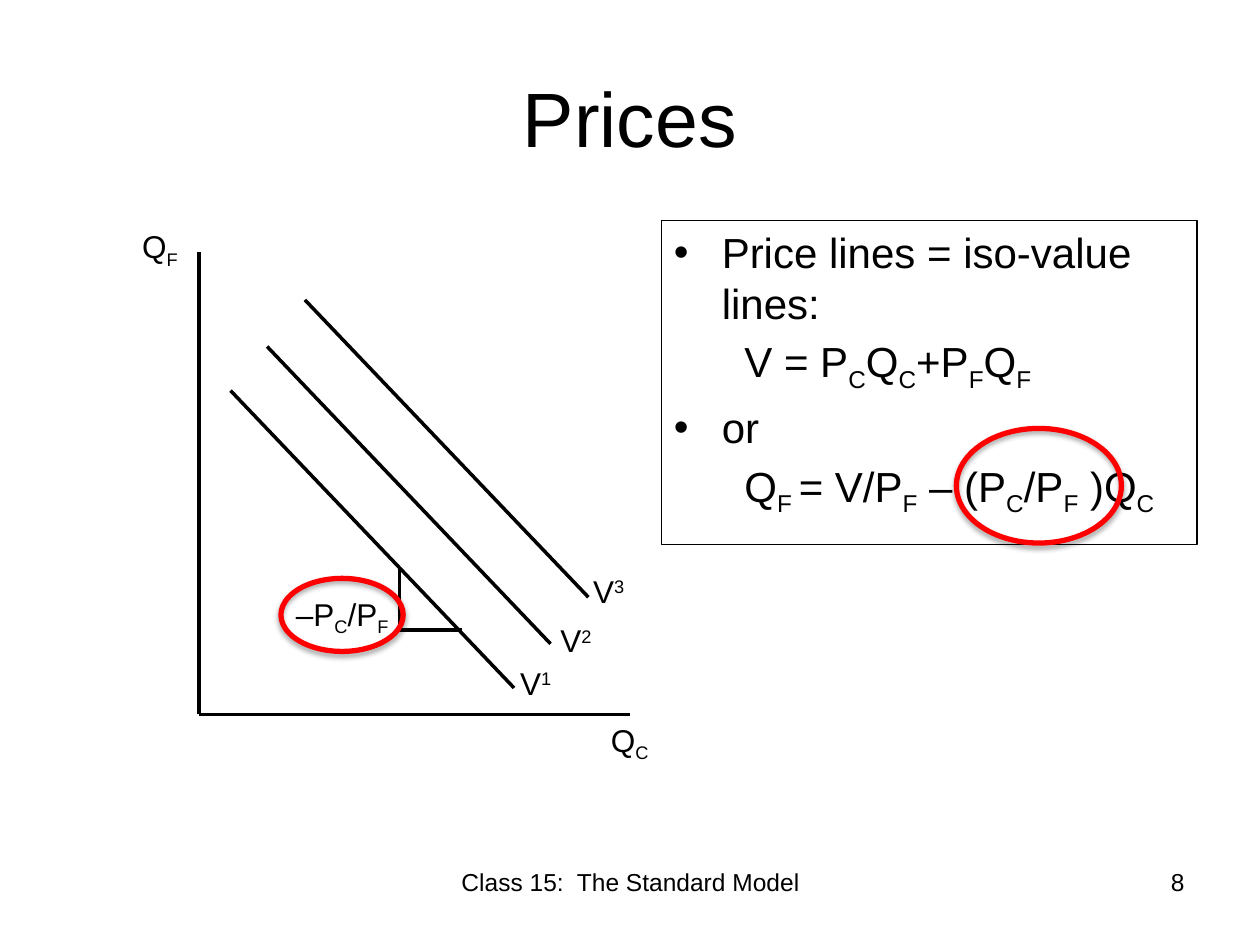
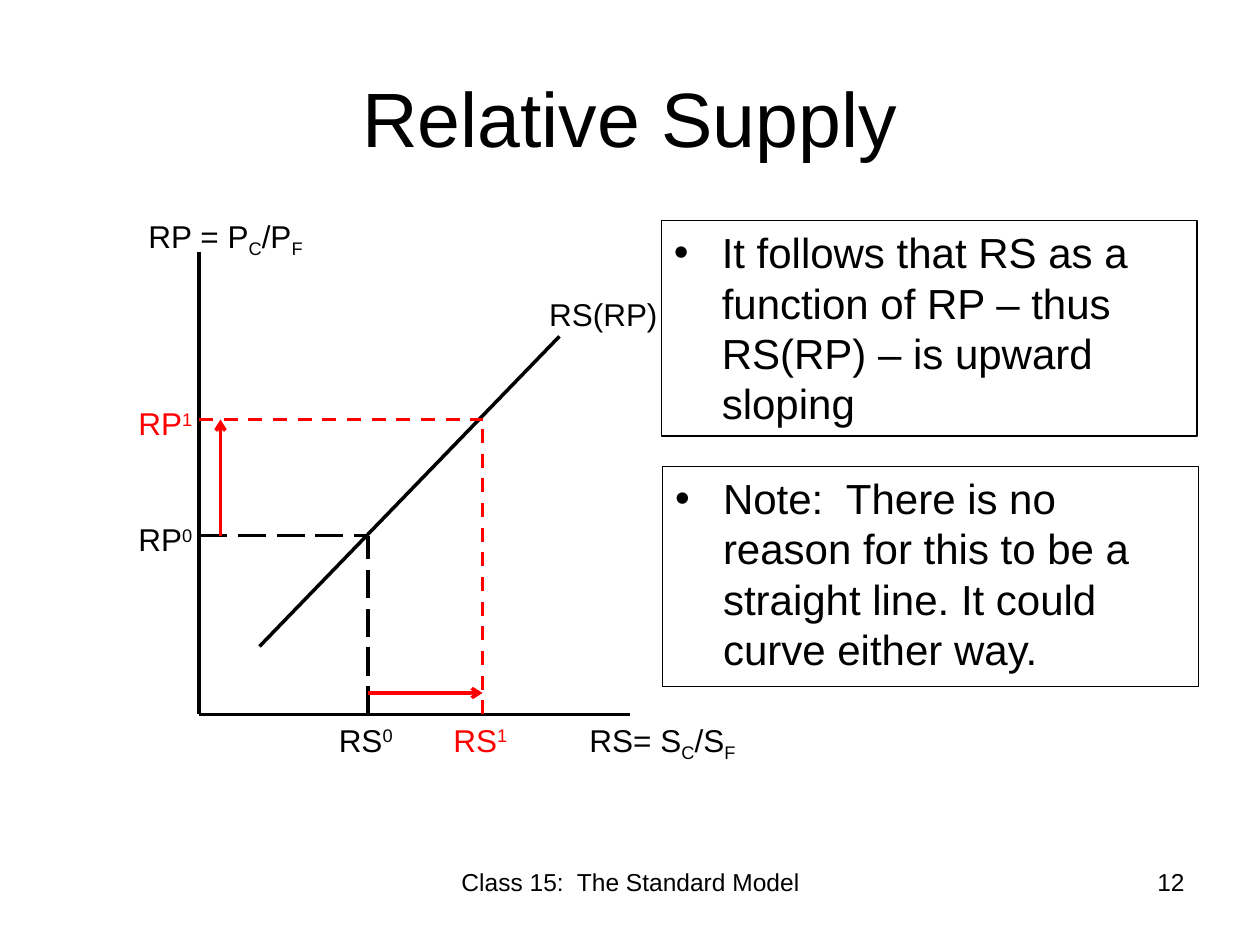
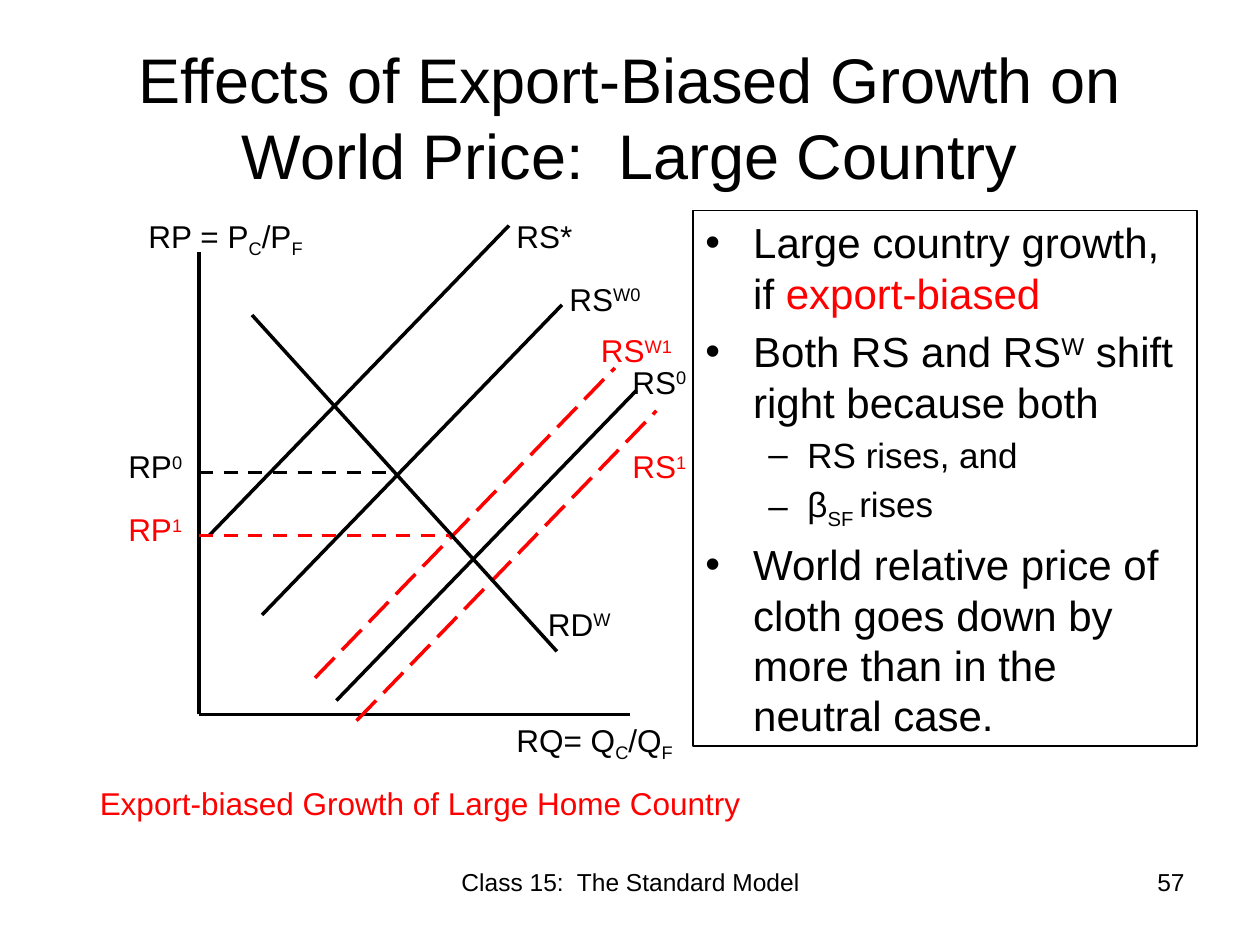
import pptx
import pptx.util
import pptx.dml.color
import pptx.enum.dml
import pptx.enum.shapes
import pptx.enum.text
import pptx.oxml.ns
import lxml.etree

Inches = pptx.util.Inches
Pt = pptx.util.Pt
ALIGN = pptx.enum.text.PP_ALIGN
ANCHOR = pptx.enum.text.MSO_ANCHOR
SHAPE = pptx.enum.shapes.MSO_SHAPE
DASH = pptx.enum.dml.MSO_LINE.DASH
LONG_DASH = pptx.enum.dml.MSO_LINE.LONG_DASH
qn = pptx.oxml.ns.qn

COLORS = {"ink": "000000", "accent": "FF0000"}
FONT = "Arial"
FOOTER = "Class 15:  The Standard Model"
BASELINES = {"_": "-25000", "^": "30000"}
ORIGIN = (1.58, 5.67)
AXIS_TOP = 2
AXIS_RIGHT = 5
SUPPLY_RUN = (2.38, -2.46)
PRICE_RUN = (2.25, 2.36)


def rgb(name):
    return pptx.dml.color.RGBColor.from_string(COLORS[name])


def sub(parent, tag, **attrs):
    return lxml.etree.SubElement(parent, qn(tag), attrs)


def add_run(p, text, size, color, baseline=None):
    r = p.add_run()
    r.text = text
    r.font.name = FONT
    r.font.size = Pt(size)
    r.font.color.rgb = rgb(color)
    if baseline:
        r.font._element.set("baseline", baseline)


def write_text(p, text, size=18, color="ink", align=ALIGN.LEFT, bullet=None,
               margin=0, hang=0, before=0):
    """Markup: _{subscript}, ^{superscript}, !{accent colour}."""
    p.alignment = align
    p.space_before = Pt(before)
    pPr = p._p.get_or_add_pPr()
    pPr.set("marL", str(Inches(margin)))
    pPr.set("indent", str(-Inches(hang)))
    if bullet:
        sub(pPr, "a:buFont", typeface=FONT)
        sub(pPr, "a:buChar", char=bullet)
    else:
        sub(pPr, "a:buNone")
    for chunk in text.split("}"):
        plain, mark, special = chunk.partition("{")
        kind = plain[-1] if mark else ""
        plain = plain[:-1] if mark else plain
        if plain:
            add_run(p, plain, size, color)
        if special:
            add_run(p, special, size, "accent" if kind == "!" else color,
                    BASELINES.get(kind))


def add_label(s, text, left, top, width, height=0.4, wrap=True, **fmt):
    sp = s.shapes.add_textbox(Inches(left), Inches(top), Inches(width), Inches(height))
    tf = sp.text_frame
    tf.word_wrap = wrap
    write_text(tf.paragraphs[0], text, **fmt)


def add_line(s, start, end, color="ink", dash=None, arrow=False):
    ends = [Inches(v) for v in (*start, *end)]
    cx = s.shapes.add_connector(pptx.enum.shapes.MSO_CONNECTOR.STRAIGHT, *ends)
    cx.line.color.rgb = rgb(color)
    cx.line.width = Pt(2)
    if dash:
        cx.line.dash_style = dash
    if arrow:
        sub(cx.line._get_or_add_ln(), "a:tailEnd", type="arrow")
    sub(cx._element.spPr, "a:effectLst")


def add_run_line(s, start, run, **fmt):
    add_line(s, start, (start[0] + run[0], start[1] + run[1]), **fmt)


def add_outline(s, kind, box, color, width):
    sp = s.shapes.add_shape(kind, *[Inches(v) for v in box])
    sp.shadow.inherit = False
    sp.fill.background()
    sp.line.color.rgb = rgb(color)
    sp.line.width = Pt(width)
    return sp


def add_highlight(s, *box):
    sp = add_outline(s, SHAPE.OVAL, box, "accent", 3)
    effects = sp._element.spPr.find(qn("a:effectLst"))
    shadow = sub(effects, "a:outerShdw", blurRad=str(Pt(3.1)), dist=str(Pt(1.8)),
                 dir="5400000", rotWithShape="0")
    sub(sub(shadow, "a:srgbClr", val=COLORS["ink"]), "a:alpha", val="35000")


def bullet(text):
    return text, dict(size=24, bullet="•", margin=0.38, hang=0.38)


def dash_item(text):
    return text, dict(size=20, bullet="–", margin=0.81, hang=0.31)


def formula(text):
    return text, dict(size=24, margin=0.56)


def add_notes_box(s, box, items):
    sp = add_outline(s, SHAPE.RECTANGLE, box, "ink", 0.75)
    tf = sp.text_frame
    tf.word_wrap = True
    tf.vertical_anchor = ANCHOR.TOP
    for i, (text, fmt) in enumerate(items):
        p = tf.add_paragraph() if i else tf.paragraphs[0]
        write_text(p, text, before=0.2 * fmt["size"], **fmt)


def add_axes(s):
    add_line(s, ORIGIN, (AXIS_RIGHT, ORIGIN[1]))
    add_line(s, ORIGIN, (ORIGIN[0], AXIS_TOP))


def add_level(s, x, y, **fmt):
    add_line(s, (ORIGIN[0], y), (x, y), **fmt)


def add_guides(s, x, y, **fmt):
    add_level(s, x, y, **fmt)
    add_line(s, (x, ORIGIN[1]), (x, y), **fmt)


def add_graph_slide(prs, title, number, size=44):
    s = prs.slides.add_slide(prs.slide_layouts[5])
    sp = s.shapes.title
    sp.left, sp.top, sp.width, sp.height = [Inches(v) for v in (0.5, 0.3, 9, 1.25)]
    tf = sp.text_frame
    tf.word_wrap = True
    tf.auto_size = pptx.enum.text.MSO_AUTO_SIZE.NONE
    tf.vertical_anchor = ANCHOR.MIDDLE
    write_text(tf.paragraphs[0], title, size=size, align=ALIGN.CENTER)
    add_label(s, FOOTER, 3.42, 6.83, 3.17, 0.52, size=14, align=ALIGN.CENTER)
    add_label(s, str(number), 7.17, 6.83, 2.33, 0.52, size=14, align=ALIGN.RIGHT)
    add_axes(s)
    return s


def build_prices(prs):
    s = add_graph_slide(prs, "Prices", 8)
    add_label(s, "Q_{F}", 1.03, 1.75, 0.75)
    add_label(s, "Q_{C}", 4.75, 5.67, 0.75)
    add_notes_box(s, (5.25, 1.75, 4.25, 2.57), [
        bullet("Price lines = iso-value lines:"),
        formula("V = P_{C}Q_{C}+P_{F}Q_{F}"),
        bullet("or"),
        formula("Q_{F }= V/P_{F} – (P_{C}/P_{F} )Q_{C}"),
    ])
    price_lines = [
        ("V^{1}", (1.83, 3.1), (4.03, 5.22)),
        ("V^{2}", (2.12, 2.75), (4.35, 4.88)),
        ("V^{3}", (2.42, 2.38), (4.61, 4.49)),
    ]
    for name, start, label_at in price_lines:
        add_run_line(s, start, PRICE_RUN)
        add_label(s, name, *label_at, 0.94)
    slope_corner = (3.17, 5)
    add_line(s, (3.17, 4.5), slope_corner)
    add_line(s, (3.67, 5), slope_corner)
    add_label(s, "–P_{C}/P_{F}", 2.25, 4.67, 0.97, wrap=False)
    add_highlight(s, 7.59, 3.4, 1.31, 0.91)
    add_highlight(s, 2.23, 4.59, 0.97, 0.58)


def build_relative_supply(prs):
    s = add_graph_slide(prs, "Relative Supply", 12)
    add_label(s, "RP = P_{C}/P_{F}", 1.08, 1.67, 1.51)
    add_label(s, "RS= S_{C}/S_{F}", 4.58, 5.67, 1.75)
    add_notes_box(s, (5.25, 1.75, 4.25, 1.71), [
        bullet("It follows that RS as a function of RP – thus RS(RP) – is upward sloping")])
    add_notes_box(s, (5.26, 3.7, 4.25, 1.75), [
        bullet("Note:  There is no reason for this to be a straight line. "
               "It could curve either way.")])
    add_run_line(s, (2.06, 5.13), SUPPLY_RUN)
    add_label(s, "RS(RP)", 4.26, 2.29, 1.07, wrap=False)
    x0, y0, x1, y1 = 2.92, 4.25, 3.83, 3.33
    for n, x, y, color, dash in [(0, x0, y0, "ink", LONG_DASH),
                                 (1, x1, y1, "accent", DASH)]:
        add_guides(s, x, y, color=color, dash=dash)
        add_label(s, f"RP^{{{n}}}", 1, y - 0.17, 0.72, color=color)
        add_label(s, f"RS^{{{n}}}", x - 0.33, ORIGIN[1], 0.72, color=color)
    add_line(s, (x0, 5.5), (x1, 5.5), color="accent", arrow=True)
    add_line(s, (1.75, y0), (1.75, y1), color="accent", arrow=True)


def build_biased_growth(prs):
    s = add_graph_slide(
        prs, "Effects of Export-Biased Growth on World Price:  Large Country", 57, size=36)
    add_label(s, "RP = P_{C}/P_{F}", 1.08, 1.67, 1.51)
    add_label(s, "RQ= Q_{C}/Q_{F}", 4, 5.67, 1.5)
    add_notes_box(s, (5.5, 1.67, 4, 4.25), [
        bullet("Large country growth, if !{export-biased}"),
        bullet("Both RS and RS^{W} shift right because both"),
        dash_item("RS rises, and"),
        dash_item("β_{SF }rises"),
        bullet("World relative price of cloth goes down by more than in the neutral case."),
    ])
    supply_lines = [
        ("RS*", (1.66, 4.25), (4, 1.67, 0.65), "ink", None),
        ("RS^{W0}", (2.08, 4.88), (4.42, 2.17, 0.81), "ink", None),
        ("RS^{0}", (2.67, 5.56), (4.92, 2.83, 0.65), "ink", None),
        ("RS^{W1}", (2.5, 5.38), (4.67, 2.58, 0.81), "accent", LONG_DASH),
        ("RS^{1}", (2.83, 5.72), (4.92, 3.5, 0.65), "accent", LONG_DASH),
    ]
    for name, start, label_at, color, dash in supply_lines:
        add_run_line(s, start, SUPPLY_RUN, color=color, dash=dash)
        add_label(s, name, *label_at, wrap=False, color=color)
    add_line(s, (2, 2.5), (4.42, 5.17))
    add_label(s, "RD^{W}", 4.25, 4.75, 0.73, wrap=False)
    for name, x, y, color in [("RP^{0}", 3.08, 3.75, "ink"),
                              ("RP^{1}", 3.56, 4.25, "accent")]:
        add_level(s, x, y, color=color, dash=DASH)
        add_label(s, name, 0.92, y - 0.25, 0.67, color=color)
    add_label(s, "Export-biased Growth of Large Home Country", 0.67, 6.17, 5.33,
              color="accent", align=ALIGN.CENTER)


def main():
    prs = pptx.Presentation()
    prs.slide_width = Inches(10)
    prs.slide_height = Inches(7.5)
    build_prices(prs)
    build_relative_supply(prs)
    build_biased_growth(prs)
    prs.save("out.pptx")


if __name__ == "__main__":
    main()
